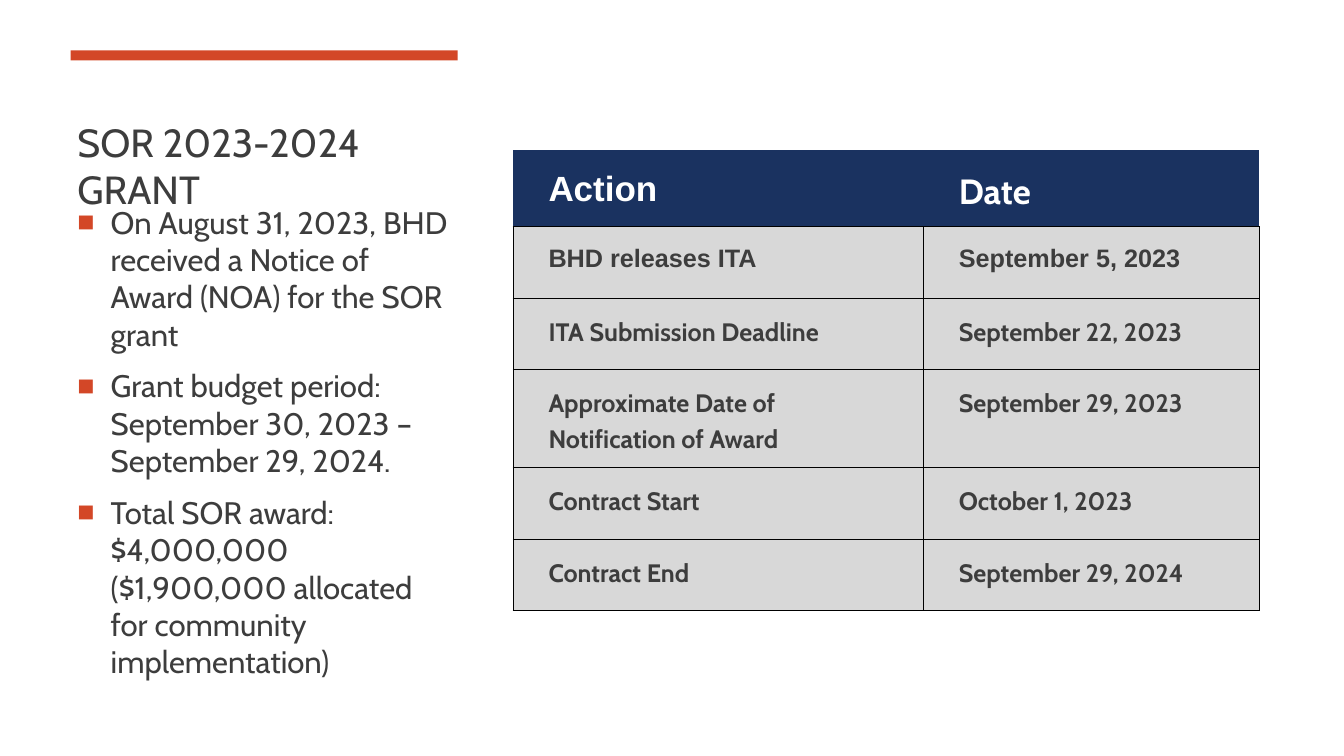
from lxml.etree import SubElement
from pptx import Presentation
from pptx.dml.color import RGBColor
from pptx.enum.shapes import MSO_SHAPE
from pptx.enum.text import MSO_ANCHOR
from pptx.oxml.ns import qn
from pptx.util import Inches, Pt

COLORS = {
    "text": "3D3D3D",
    "accent": "D34727",
    "navy": "1A3260",
    "gray": "D8D8D8",
    "white": "FFFFFF",
    "line": "000000",
}
TITLE = "SOR 2023-2024 GRANT"
POINTS = [
    "On August 31, 2023, BHD received a Notice of Award (NOA) for the SOR grant",
    "Grant budget period: September 30, 2023 – September 29, 2024.",
    "Total SOR award: $4,000,000 ($1,900,000 allocated for community implementation)",
]
# Each cell is its text and its font
DATES = [
    [("Action", "Arial"), ("Date", "Cabin")],
    [("BHD releases ITA", "Arial"), ("September 5, 2023", "Arial")],
    [("ITA Submission Deadline", "Cabin"), ("September 22, 2023", "Cabin")],
    [("Approximate Date of Notification of Award", "Cabin"),
     ("September 29, 2023", "Cabin")],
    [("Contract Start", "Cabin"), ("October 1, 2023", "Cabin")],
    [("Contract End", "Cabin"), ("September 29, 2024", "Cabin")],
]
WIDTHS = [4.07, 3.33]
HEIGHTS = [0.76, 0.71, 0.71, 0.94, 0.71, 0.71]


def paint(fill, color):
    fill.solid()
    fill.fore_color.rgb = RGBColor.from_string(COLORS[color])


def style(para, size, color="text", name="Cabin", bold=False):
    for run in para.runs:
        font = run.font
        font.name, font.size, font.bold = name, Pt(size), bold
        font.color.rgb = RGBColor.from_string(COLORS[color])


def add_box(slide, top, height, anchor):
    box = slide.shapes.add_textbox(
        Inches(0.67), Inches(top), Inches(3.9), Inches(height))
    frame = box.text_frame
    frame.word_wrap = True
    frame.vertical_anchor = anchor
    return frame


def add_bar(slide):
    bar = slide.shapes.add_shape(
        MSO_SHAPE.RECTANGLE, Inches(0.7), Inches(0.5), Inches(3.84), Inches(0.1))
    bar.shadow.inherit = False
    paint(bar.fill, "accent")
    bar.line.fill.background()


def add_bullet(para):
    props = para._p.get_or_add_pPr()
    props.set("marL", str(Inches(0.33)))
    props.set("indent", str(-Inches(0.33)))
    color = SubElement(props, qn("a:buClr"))
    SubElement(color, qn("a:srgbClr"), val=COLORS["accent"])
    SubElement(props, qn("a:buSzPct"), val="92000")
    SubElement(props, qn("a:buFont"), typeface="Arial")
    SubElement(props, qn("a:buChar"), char="■")


def add_points(slide):
    frame = add_box(slide, 2.56, 3.64, MSO_ANCHOR.MIDDLE)
    frame.text = "\n".join(POINTS)
    for para in frame.paragraphs:
        para.space_before, para.space_after = Pt(4.4), Pt(6)
        add_bullet(para)
        style(para, 22.2)


def set_edges(cell, head):
    """Draw all four cell borders, or only the lower one in the head row."""
    props = cell._tc.get_or_add_tcPr()
    for place, side in enumerate("LRTB"):
        edge = props.makeelement(qn("a:ln" + side), {"w": str(Pt(1))})
        if head and side != "B":
            SubElement(edge, qn("a:noFill"))
        else:
            fill = SubElement(edge, qn("a:solidFill"))
            SubElement(fill, qn("a:srgbClr"), val=COLORS["line"])
        props.insert(place, edge)


def fill_cell(cell, text, name, head):
    cell.text = text
    cell.margin_left, cell.margin_right = Inches(0.28), Inches(0.4)
    cell.margin_top = cell.margin_bottom = Inches(0.14)
    para = cell.text_frame.paragraphs[0]
    para.line_spacing = 1.15
    para._p.get_or_add_pPr().set("marL", str(Inches(0.07)))
    style(para, 25 if head else 18, "white" if head else "text", name, True)
    paint(cell.fill, "navy" if head else "gray")
    set_edges(cell, head)


def add_dates(slide):
    table = slide.shapes.add_table(
        len(DATES), len(WIDTHS), Inches(5.09), Inches(1.49),
        Inches(sum(WIDTHS)), Inches(sum(HEIGHTS))).table
    for col, width in zip(table.columns, WIDTHS):
        col.width = Inches(width)
    for row, height in zip(table.rows, HEIGHTS):
        row.height = Inches(height)
    for r, cells in enumerate(DATES):
        for c, (text, name) in enumerate(cells):
            fill_cell(table.cell(r, c), text, name, r == 0)


def main():
    deck = Presentation()
    deck.slide_width, deck.slide_height = Inches(13.33), Inches(7.5)
    slide = deck.slides.add_slide(deck.slide_layouts[6])
    title = add_box(slide, 0.77, 1.39, MSO_ANCHOR.BOTTOM)
    title.text = TITLE
    style(title.paragraphs[0], 28)
    add_bar(slide)
    add_points(slide)
    add_dates(slide)
    deck.save("out.pptx")


if __name__ == "__main__":
    main()
